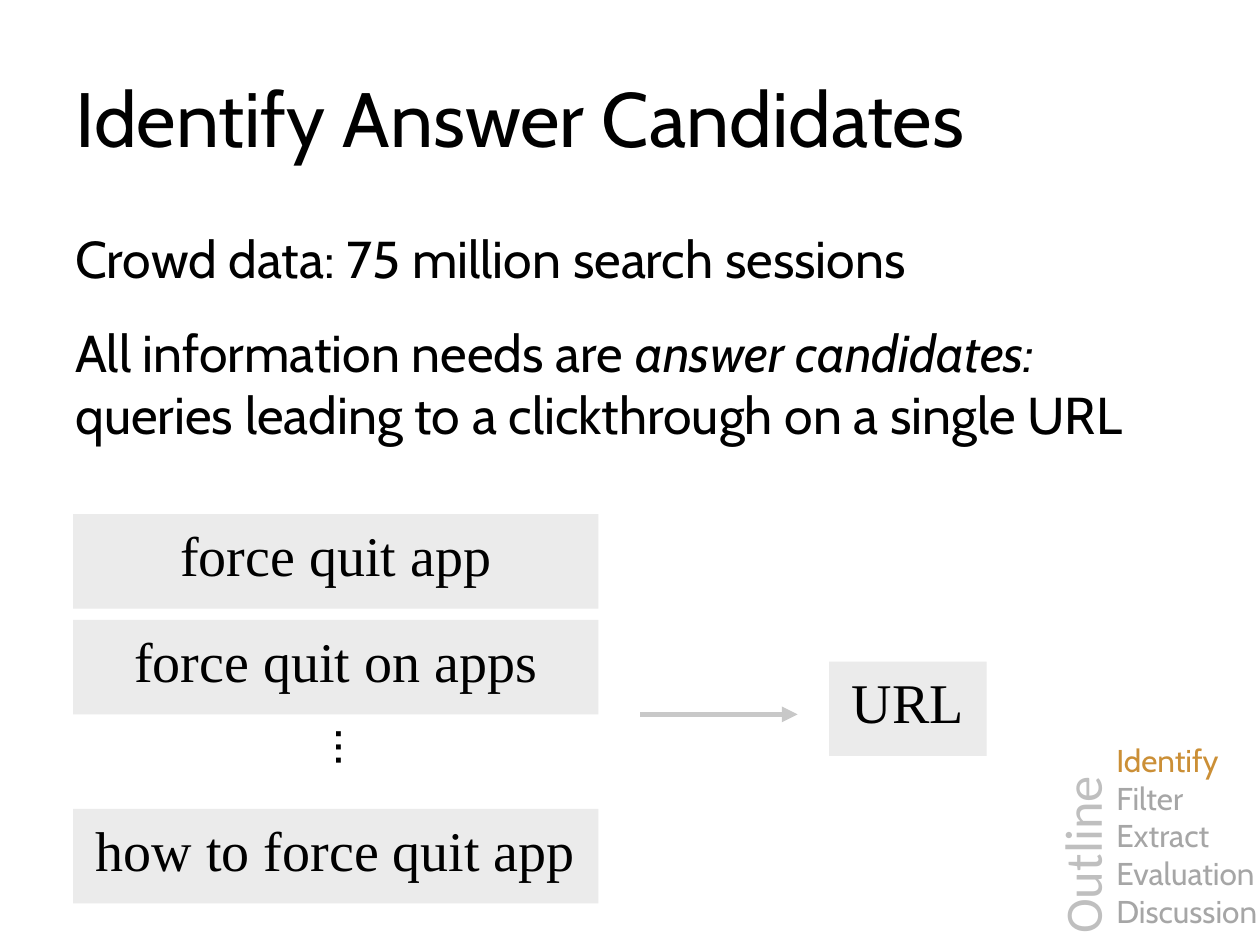
from lxml import etree
from pptx import Presentation
from pptx.dml.color import RGBColor
from pptx.enum.shapes import MSO_CONNECTOR, MSO_SHAPE
from pptx.enum.text import MSO_ANCHOR, PP_ALIGN
from pptx.oxml.ns import qn
from pptx.util import Inches, Pt

RECT, STRAIGHT = MSO_SHAPE.RECTANGLE, MSO_CONNECTOR.STRAIGHT
LEFT, CENTER = PP_ALIGN.LEFT, PP_ALIGN.CENTER
TOP, MIDDLE = MSO_ANCHOR.TOP, MSO_ANCHOR.MIDDLE

COLORS = {"text": "000000", "box": "EBEBEB", "arrow": "C8C8C8",
          "current": "CB8F36", "section": "A6A6A6", "outline": "BFBFBF"}
TITLE = "Identify Answer Candidates"
BODY = [
    [("Crowd data: 75 million search sessions", False)],
    [("All information needs are ", False), ("answer candidates:\n", True),
     ("queries leading to a clickthrough on a single URL", False)],
]
SECTIONS = ["Identify", "Filter", "Extract", "Evaluation", "Discussion"]
CURRENT = "Identify"
QUERIES = [("force quit app", 4.08), ("force quit on apps", 4.92),
           ("how to force quit app", 6.42)]
QUERY_LEFT, QUERY_WIDTH, BOX_HEIGHT = 0.58, 4.17, 0.75


def rgb(name):
    return RGBColor.from_string(COLORS[name])


def style(r, size, font="Cabin", color="text"):
    r.font.size = Pt(size)
    r.font.name = font
    r.font.color.rgb = rgb(color)


def add_text(s, box, wrap=True):
    sp = s.shapes.add_textbox(*map(Inches, box))
    sp.text_frame.word_wrap = wrap
    return sp


def add_rotated(s, box, text, angle, size, font, color):
    sp = add_text(s, box, wrap=False)
    sp.rotation = angle
    p = sp.text_frame.paragraphs[0]
    p.text = text
    style(p.runs[0], size, font, color)


def add_box(s, text, left, top, width):
    sp = s.shapes.add_shape(RECT, *map(Inches, (left, top, width, BOX_HEIGHT)))
    sp.shadow.inherit = False
    sp.fill.solid()
    sp.fill.fore_color.rgb = rgb("box")
    sp.line.fill.background()
    tf = sp.text_frame
    tf.vertical_anchor = TOP
    p = tf.paragraphs[0]
    p.text = text
    p.alignment = CENTER
    style(p.runs[0], 32, "Times New Roman")


def add_title(s):
    sp = s.shapes.title
    sp.left, sp.top, sp.width, sp.height = map(Inches, (0.5, 0.3, 9, 1.25))
    tf = sp.text_frame
    tf.text = TITLE
    tf.vertical_anchor = MIDDLE
    p = tf.paragraphs[0]
    p.alignment = LEFT
    style(p.runs[0], 44)


def add_outline(s):
    tf = add_text(s, (8.86, 5.83, 1.14, 1.62)).text_frame
    tf.margin_left = tf.margin_right = 0
    tf.text = "\n".join(SECTIONS)
    for p in tf.paragraphs:
        style(p.runs[0], 18, color="current" if p.text == CURRENT else "section")
    add_rotated(s, (7.75, 6.37, 1.67, 0.61), "Outline", 270, 30, "Calibri", "outline")


def add_body(s):
    tf = add_text(s, (0.5, 1.75, 9, 2)).text_frame
    for i, parts in enumerate(BODY):
        p = tf.add_paragraph() if i else tf.paragraphs[0]
        p.space_after = Pt(18)
        for text, italic in parts:
            r = p.add_run()
            r.text = text.rstrip("\n")
            style(r, 29.6)
            r.font.italic = italic
            if text.endswith("\n"):
                p.add_line_break()


def add_arrow(s):
    line = s.shapes.add_connector(STRAIGHT, *map(Inches, (5.08, 5.67, 6.33, 5.67)))
    line.line.color.rgb = rgb("arrow")
    line.line.width = Pt(3)
    etree.SubElement(line.line._get_or_add_ln(), qn("a:tailEnd"), type="triangle")
    etree.SubElement(line._element.spPr, qn("a:effectLst"))


def main():
    prs = Presentation()
    prs.slide_width, prs.slide_height = Inches(10), Inches(7.5)
    s = prs.slides.add_slide(prs.slide_layouts[5])
    add_title(s)
    add_outline(s)
    add_rotated(s, (2.52, 5.69, 0.65, 0.64), "…", 90, 32, "Cabin", "text")
    add_body(s)
    for query, top in QUERIES:
        add_box(s, query, QUERY_LEFT, top, QUERY_WIDTH)
    add_box(s, "URL", 6.58, 5.25, 1.25)
    add_arrow(s)
    prs.save("out.pptx")


if __name__ == "__main__":
    main()
